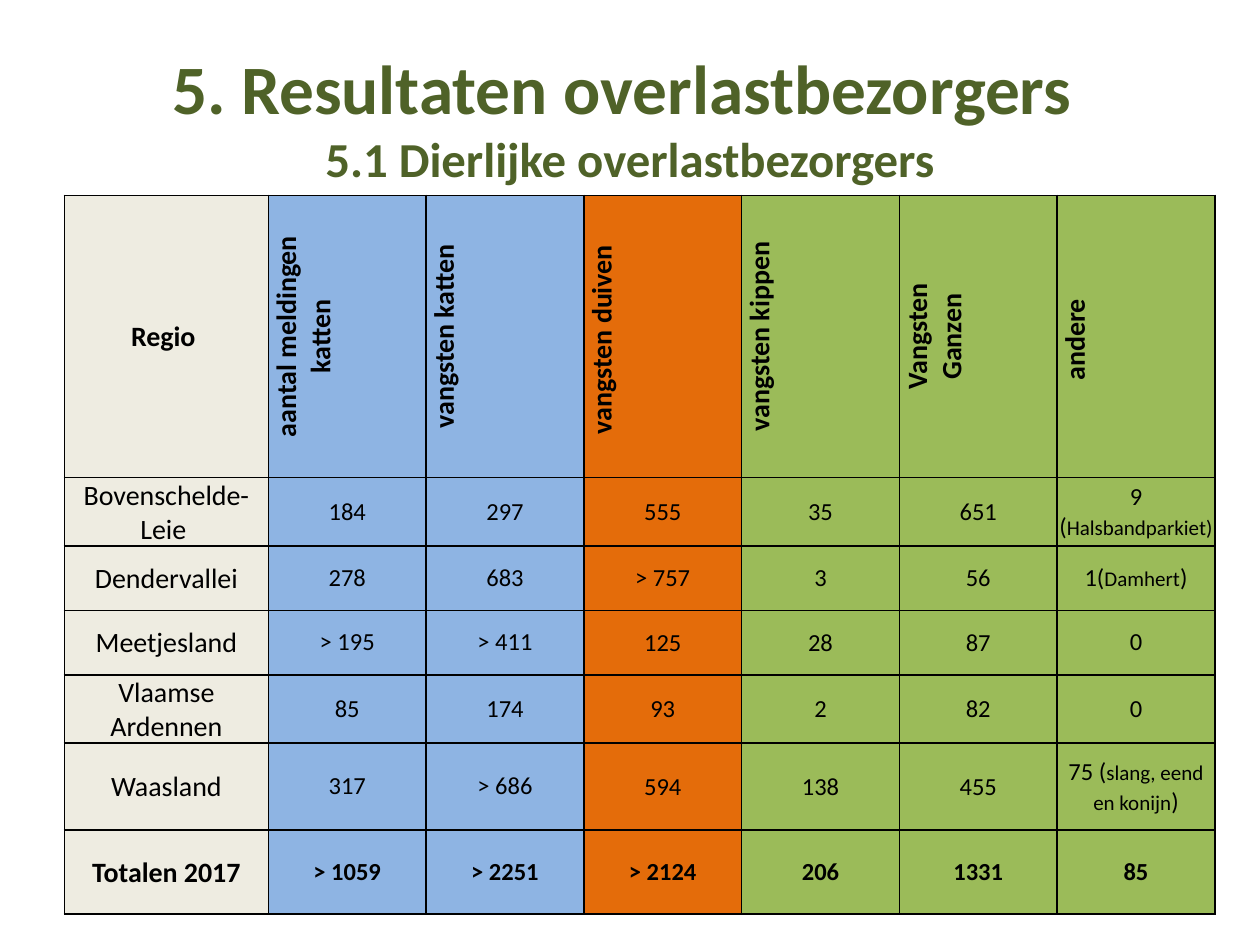
from lxml.etree import SubElement
from pptx import Presentation
from pptx.dml.color import RGBColor
from pptx.enum.text import MSO_ANCHOR, PP_ALIGN
from pptx.oxml.ns import qn
from pptx.util import Cm, Pt

COLORS = {
    "title": "4F6228",
    "text": "000000",
    "border": "000000",
    "region": "EEECE1",
    "cats": "8EB4E3",
    "pigeons": "E46C0A",
    "other": "9BBB59",
}
COLUMN_FILLS = ["region", "cats", "cats", "pigeons", "other", "other", "other"]
ROW_HEIGHTS = [3.58, 1.3, 1.3, 1.3, 1.3, 1.75, 1.7]
REGION_WIDTH = 4.11

# A tuple holds runs that alternate between normal and small text
ROWS = [
    ["Regio ", "aantal meldingen katten", "vangsten katten", "vangsten duiven ",
     "vangsten kippen", "Vangsten\nGanzen", "andere "],
    ["Bovenschelde-Leie ", "184", "297", "555", "35", "651",
     ("9 (", "Halsbandparkiet)")],
    ["Dendervallei", "278", "683", "> 757", "3", "56", ("1(", "Damhert", ")")],
    ["Meetjesland", "> 195", "> 411", "125", "28", "87", "0"],
    ["Vlaamse Ardennen", "85", "174", "93", "2", "82", "0"],
    ["Waasland", "317", "> 686", "594", "138", "455",
     ("75 (", "slang, eend en konijn", ")")],
    ["Totalen 2017", "> 1059", "> 2251", "> 2124", "206", "1331", "85"],
]


def add_text(paragraph, text, size=14, bold=False, color="text"):
    paragraph.alignment = PP_ALIGN.CENTER
    run = paragraph.add_run()
    run.text = text
    run.font.name = "Calibri"
    run.font.size = Pt(size)
    run.font.bold = bold
    run.font.color.rgb = RGBColor.from_string(COLORS[color])


def add_title(slide, left, top, width, height):
    shape = slide.shapes.add_textbox(Cm(left), Cm(top), Cm(width), Cm(height))
    frame = shape.text_frame
    frame.word_wrap = True
    frame.vertical_anchor = MSO_ANCHOR.MIDDLE
    paragraph = frame.paragraphs[0]
    add_text(paragraph, "5. Resultaten overlastbezorgers ", size=39.6, bold=True, color="title")
    paragraph.add_line_break()
    add_text(paragraph, "5.1 Dierlijke overlastbezorgers", size=27.9, bold=True, color="title")


def add_borders(cell):
    properties = cell._tc.get_or_add_tcPr()
    for side in ("a:lnL", "a:lnR", "a:lnT", "a:lnB"):
        line = SubElement(properties, qn(side), w=str(Pt(1)))
        fill = SubElement(line, qn("a:solidFill"))
        SubElement(fill, qn("a:srgbClr"), val=COLORS["border"])


def format_cell(cell, fill, wide_margin, vertical):
    add_borders(cell)
    cell.fill.solid()
    cell.fill.fore_color.rgb = RGBColor.from_string(COLORS[fill])
    cell.vertical_anchor = MSO_ANCHOR.MIDDLE
    cell.margin_left = cell.margin_right = Cm(0.08 if wide_margin else 0.02)
    cell.margin_top = Cm(0 if wide_margin else 0.02)
    cell.margin_bottom = Cm(0)
    if vertical:
        cell._tc.get_or_add_tcPr().set("vert", "vert270")


def fill_cell(cell, content, size, bold):
    frame = cell.text_frame
    if isinstance(content, tuple):
        for index, text in enumerate(content):
            add_text(frame.paragraphs[0], text, size=12 if index % 2 else size, bold=bold)
        return
    for index, text in enumerate(content.split("\n")):
        paragraph = frame.add_paragraph() if index else frame.paragraphs[0]
        add_text(paragraph, text, size=size, bold=bold)


def add_results_table(slide, left, top, width):
    shape = slide.shapes.add_table(len(ROWS), len(COLUMN_FILLS), Cm(left), Cm(top),
                                   Cm(width), Cm(sum(ROW_HEIGHTS)))
    table = shape.table
    table.first_row = table.horz_banding = False

    # Region column first, the others share the remaining width
    count_width = (width - REGION_WIDTH) / (len(COLUMN_FILLS) - 1)
    for index, column in enumerate(table.columns):
        column.width = Cm(count_width if index else REGION_WIDTH)
    for row, height in zip(table.rows, ROW_HEIGHTS):
        row.height = Cm(height)

    last_row = len(ROWS) - 1
    for row_index, contents in enumerate(ROWS):
        is_header = row_index == 0
        is_edge = row_index in (0, last_row)
        for column_index, content in enumerate(contents):
            fill = COLUMN_FILLS[column_index]
            cell = table.cell(row_index, column_index)
            wide_margin = not is_edge and (fill == "cats" or content == "0")
            format_cell(cell, fill, wide_margin, is_header and column_index > 0)
            size = 16 if is_header or column_index == 0 else 14
            fill_cell(cell, content, size, is_edge)


def main():
    presentation = Presentation()
    presentation.slide_width = Cm(25.4)
    presentation.slide_height = Cm(19.05)
    slide = presentation.slides.add_slide(presentation.slide_layouts[6])
    add_title(slide, 1.27, 0.76, 22.86, 3.18)
    add_results_table(slide, 1.3, 3.94, 23.19)
    presentation.save("out.pptx")


if __name__ == "__main__":
    main()
